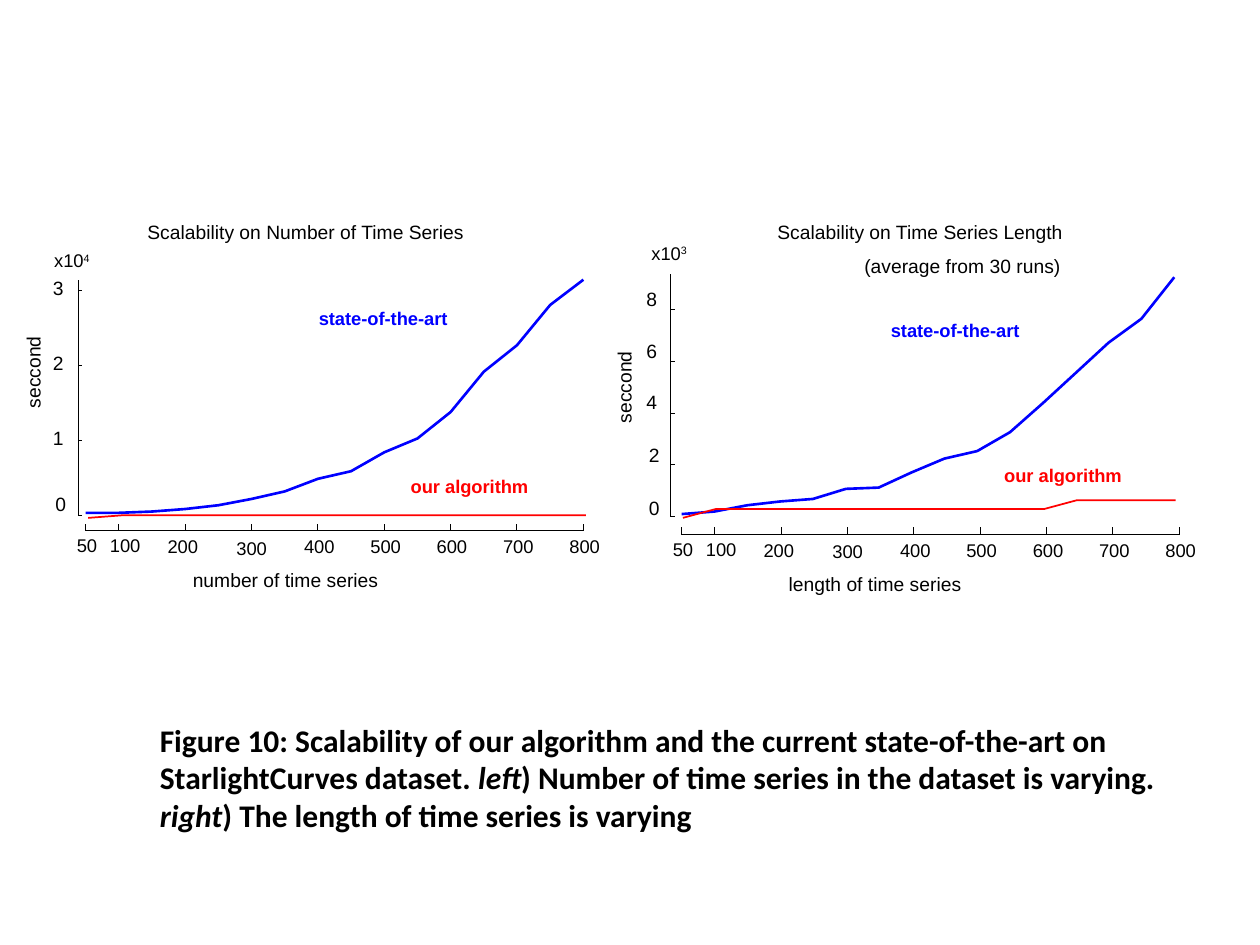
from lxml import etree
from pptx import Presentation
from pptx import util as u
from pptx.dml.color import RGBColor
from pptx.enum import shapes, text
from pptx.oxml.ns import qn

BLACK = RGBColor(0, 0, 0)
BLUE = RGBColor(0, 0, 255)
RED = RGBColor(255, 0, 0)

CAPTION = [  # wording, italic
    ("Figure 10: Scalability of our algorithm and the current state-of-the-art on "
     "StarlightCurves dataset. ", False),
    ("left", True),
    (") Number of time series in the dataset is varying. ", False),
    ("right", True),
    (") The length of time series is varying", False),
]

# value, label offset from its tick (x, y), label width
X_TICKS = [(50, -0.07, 0.03, 0.17), (100, -0.07, 0.03, 0.26), (200, -0.14, 0.04, 0.35),
           (300, -0.12, 0.05, 0.26)] + [(v, -0.11, 0.04, 0.26) for v in range(400, 900, 100)]
X_MIN, X_MAX, AXIS_WIDTH = 50, 800, 3.95

# Positions are in inches; a curve lists its heights on the slide at equal x steps.
PANELS = [
    dict(
        title=("Scalability on Number of Time Series", 1.17, 1.75, 2.66),
        x_title=("number of time series", 1.53, 4.51, 1.55),
        y_title=(-0.03, 2.85),
        exponent=("4", 0.43, 1.98),
        x_axis=(0.68, 4.21),
        y_axis=(0.62, 4.09, 2.23),
        y_step=0.595,
        y_labels=[("0", 0.44, 3.91), ("1", 0.42, 3.38), ("2", 0.42, 2.79), ("3", 0.42, 2.19)],
        rival=(0.68, 3.95, [4.07, 4.07, 4.06, 4.04, 4.01, 3.96, 3.9, 3.8,
                            3.74, 3.59, 3.48, 3.27, 2.95, 2.74, 2.42, 2.22]),
        ours=(0.7, 3.95, [4.11] + [4.09] * 15),
        rival_label=(2.53, 2.44, 1.55),
        ours_label=(3.26, 3.77, 1.4),
    ),
    dict(
        title=("Scalability on Time Series Length", 6.17, 1.75, 2.4),
        x_title=("length of time series", 6.26, 4.54, 1.44),
        y_title=(4.66, 2.97),
        exponent=("3", 5.17, 1.92),
        x_axis=(5.41, 4.24),
        y_axis=(5.32, 4.1, 2.18),
        y_step=0.41,
        y_labels=[("0", 5.15, 3.94), ("2", 5.15, 3.52), ("4", 5.13, 3.1),
                  ("6", 5.13, 2.69), ("8", 5.13, 2.28)],
        rival=(5.41, 3.91, [4.08, 4.06, 4.01, 3.98, 3.96, 3.88, 3.87, 3.75,
                            3.64, 3.58, 3.43, 3.2, 2.96, 2.72, 2.53, 2.2]),
        ours=(5.42, 3.91, [4.11] + [4.04] * 11 + [3.97] * 4),
        rival_label=(7.07, 2.53, 1.58),
        ours_label=(7.97, 3.68, 1.4),
    ),
]
AVERAGE_NOTE = ("(average from 30 runs)", 6.86, 2.02, 1.57)


def add_label(slide, wording, left, top, width, size=11, color=BLACK, bold=False, wrap=False):
    """Add a one-line text box without insets."""
    box = slide.shapes.add_textbox(u.Inches(left), u.Inches(top), u.Inches(width),
                                   u.Inches(round(size * 0.017, 2)))
    frame = box.text_frame
    frame.margin_left = frame.margin_right = frame.margin_top = frame.margin_bottom = 0
    frame.word_wrap = wrap
    frame.auto_size = text.MSO_AUTO_SIZE.SHAPE_TO_FIT_TEXT
    paragraph = frame.paragraphs[0]
    paragraph.add_run().text = wording
    font = paragraph.font
    font.name, font.size, font.bold = "Arial", u.Pt(size), bold
    font.color.rgb = color
    return box


def add_rule(slide, x1, y1, x2, y2):
    """Add a black hairline."""
    rule = slide.shapes.add_connector(shapes.MSO_CONNECTOR.STRAIGHT,
                                      *(u.Inches(n) for n in (x1, y1, x2, y2)))
    rule.line.color.rgb = BLACK
    properties = rule._element.spPr
    properties.find(qn("a:ln")).set("w", "0")  # a width of 0 must be explicit
    etree.SubElement(properties, qn("a:effectLst"))


def add_curve(slide, left, width, heights, color, weight):
    step = width / (len(heights) - 1)
    points = [(u.Inches(left + i * step), u.Inches(y)) for i, y in enumerate(heights)]
    builder = slide.shapes.build_freeform(*points[0])
    builder.add_line_segments(points[1:], close=False)
    curve = builder.convert_to_shape()
    curve.shadow.inherit = False
    curve.fill.background()
    curve.line.color.rgb = color
    curve.line.width = u.Pt(weight)


def add_panel(slide, panel):
    axis_left, axis_y = panel["x_axis"]
    add_rule(slide, axis_left, axis_y, axis_left + AXIS_WIDTH, axis_y)
    for value, dx, dy, width in X_TICKS:
        x = axis_left + (value - X_MIN) / (X_MAX - X_MIN) * AXIS_WIDTH
        add_rule(slide, x, axis_y, x, axis_y - 0.05)
        add_label(slide, str(value), x + dx, axis_y + dy, width, 10.5)

    axis_x, bottom, top = panel["y_axis"]
    add_rule(slide, axis_x, bottom, axis_x, top)
    for i, (value, left, label_top) in enumerate(panel["y_labels"]):
        y = bottom - i * panel["y_step"]
        add_rule(slide, axis_x, y, axis_x + 0.03, y)
        add_label(slide, value, left, label_top, 0.09)

    add_curve(slide, *panel["rival"], BLUE, 1.5)
    add_curve(slide, *panel["ours"], RED, 1)
    add_label(slide, "state-of-the-art", *panel["rival_label"], 10.5, BLUE, True, True)
    add_label(slide, "our algorithm", *panel["ours_label"], 10.5, RED, True, True)

    add_label(slide, *panel["title"])
    add_label(slide, *panel["x_title"])
    add_label(slide, "seccond", *panel["y_title"], 0.59).rotation = 270
    power, left, top = panel["exponent"]
    scale = add_label(slide, "x10", left, top, 0.31, 10.5)
    exponent = scale.text_frame.paragraphs[0].add_run()
    exponent.text = power
    exponent._r.get_or_add_rPr().set("baseline", "30000")


def add_caption(slide):
    box = slide.shapes.add_textbox(u.Inches(1.17), u.Inches(5.67), u.Inches(8.33), u.Inches(1.01))
    frame = box.text_frame
    frame.word_wrap = True
    frame.auto_size = text.MSO_AUTO_SIZE.SHAPE_TO_FIT_TEXT
    paragraph = frame.paragraphs[0]
    font = paragraph.font
    font.name, font.size, font.bold = "Calibri", u.Pt(18), True
    font.color.rgb = BLACK
    for wording, italic in CAPTION:
        run = paragraph.add_run()
        run.text = wording
        run.font.italic = italic


def main():
    deck = Presentation()
    deck.slide_width, deck.slide_height = u.Inches(10), u.Inches(7.5)
    slide = deck.slides.add_slide(deck.slide_layouts[6])
    add_caption(slide)
    for panel in PANELS:
        add_panel(slide, panel)
    add_label(slide, *AVERAGE_NOTE)
    deck.save("out.pptx")


if __name__ == "__main__":
    main()
